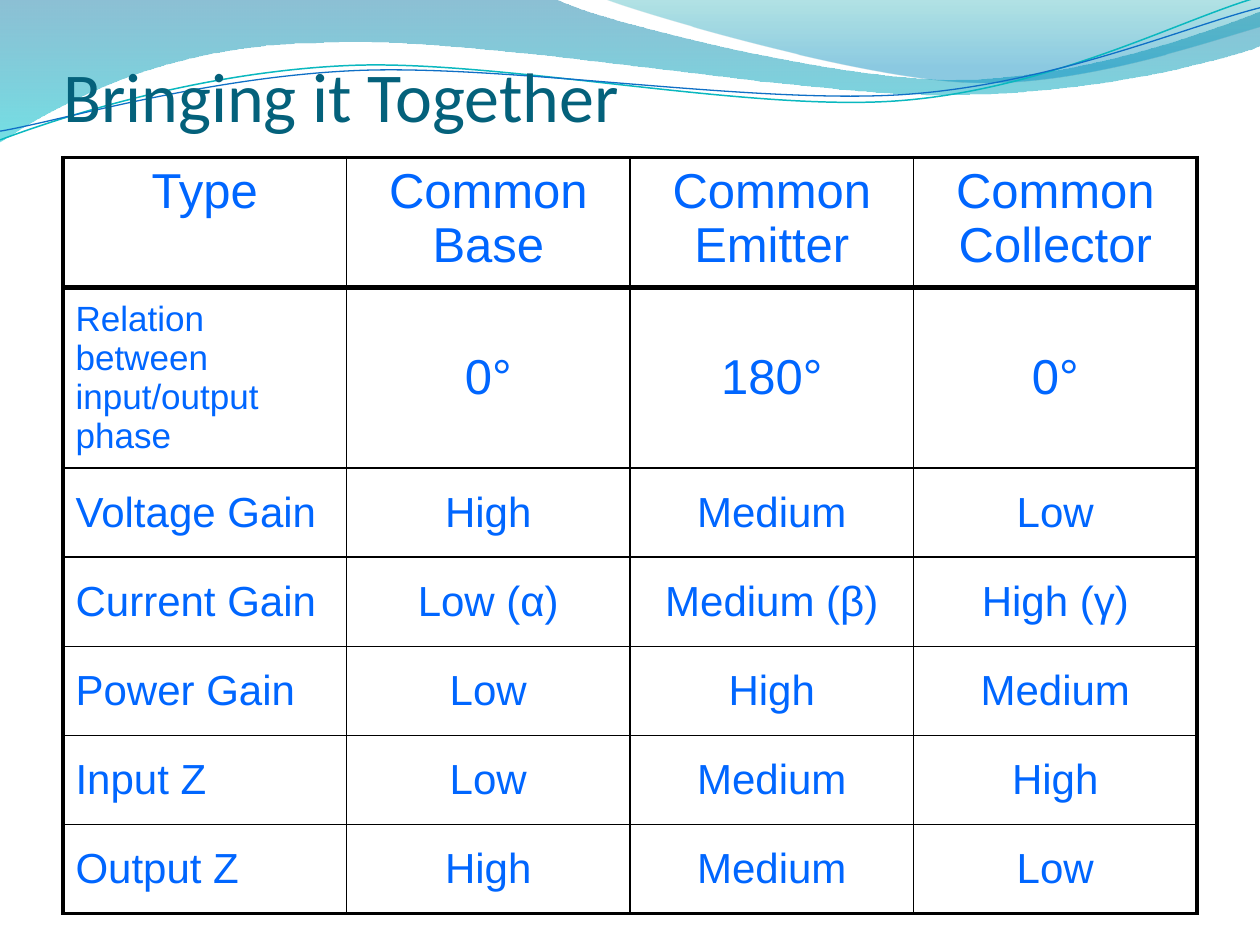
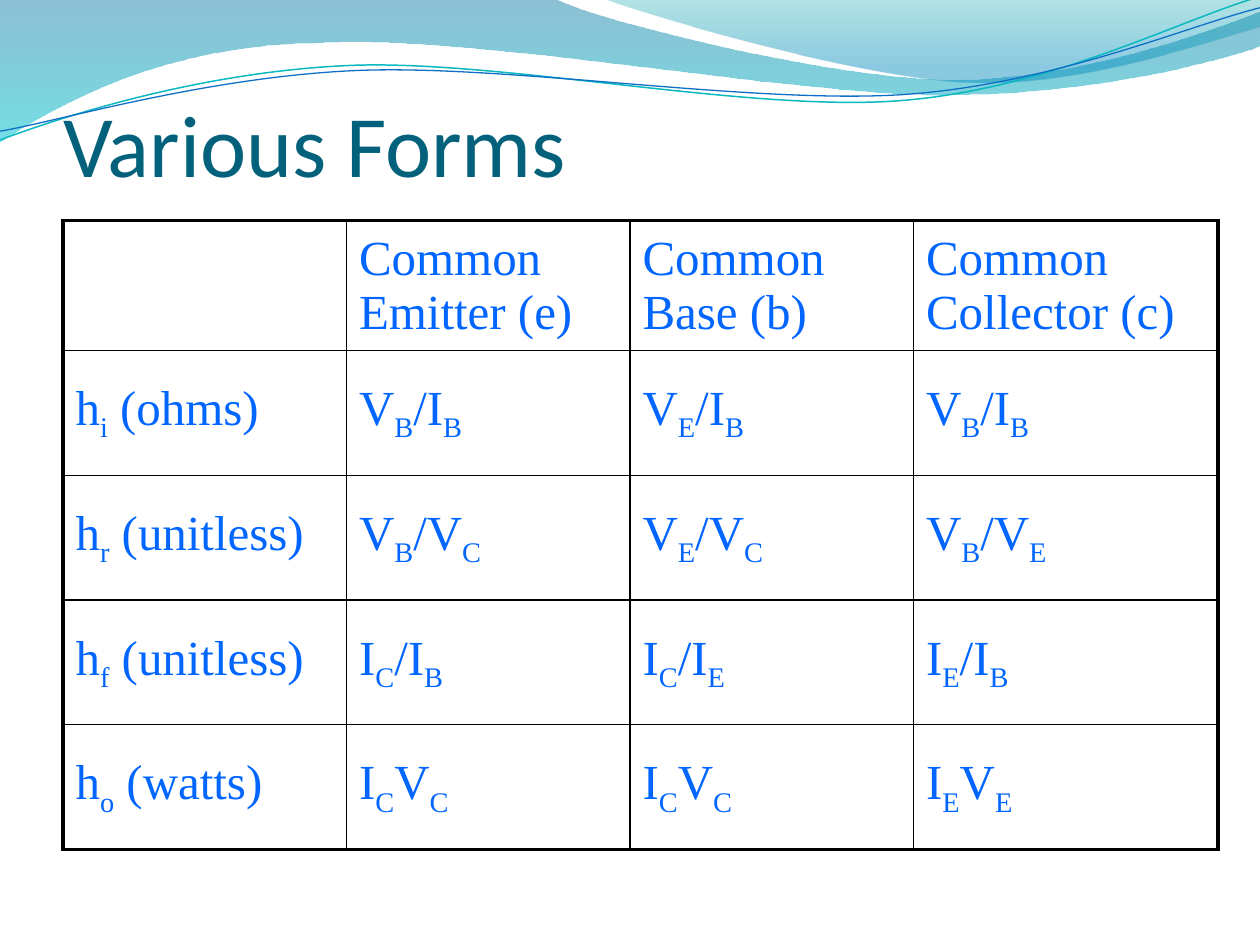
from dataclasses import dataclass

from lxml import etree
from pptx import Presentation
from pptx import util as u
from pptx.dml.color import RGBColor
from pptx.enum import text
from pptx.oxml.ns import qn


@dataclass(frozen=True)
class Theme:
    title_color: str = "04617B"
    table_color: str = "0066FF"
    border_color: str = "000000"
    title_font: str = "Calibri"
    sans: str = "Arial"
    serif: str = "Times New Roman"
    large: int = 28
    medium: int = 24
    small: int = 20
    hairline: float = 1
    frame: float = 2.25
    header_rule: float = 3


THEME = Theme()
COLUMNS, ROWS = 40, 30
CELL = u.Inches(0.25)
TITLE_ONLY = 5
LINE_TILT = 357.3

# Each wave: start point, then cubic segments (two controls and an end) or single points.
# Bands add gradient stops of (position, colour, opacity); lines add a colour and a width.
BANDS = [
    ((0, -0.04), [
        [(17.6, -0.04)],
        [(19.04, 0.68), (26.56, 2.52), (30.32, 2.52)],
        [(34.12, 2.52), (38.32, 1.04), (40, 0.36)],
        [(40.04, 1.44)],
        [(39.32, 1.76), (34.8, 3.04), (29.84, 3)],
        [(24.88, 3), (15.28, 1.12), (10.28, 1.36)],
        [(5.16, 1.4), (1.84, 3.32), (-0.04, 4.52)],
    ], [(0, "0074A1", 45), (1, "00C6CF", 55)]),
    ((19.16, -0.04), [
        [(20.36, 0.44), (27.28, 2.48), (30.76, 2.6)],
        [(34.24, 2.76), (38.44, 1.28), (40, 0.84)],
        [(40, 0)],
    ], [(0, "00A1A9", 30), (0.8, "008BBF", 45)]),
]
LINES = [
    ((-0.08, 3.5), [
        [(1.87, 2.87), (6.34, 1.64), (11.1, 1.66)],
        [(15.82, 1.68), (23.66, 3.74), (28.47, 3.6)],
        [(33.28, 3.47), (37.58, 1.43), (40.01, 0.86)],
    ], "0AB8BF", 0.85),
    ((-0.06, 3.22), [
        [(1.83, 2.99), (6.57, 1.81), (11.34, 1.83)],
        [(16.14, 1.86), (23.83, 3.5), (28.64, 3.41)],
        [(33.41, 3.31), (37.69, 1.67), (40.08, 1.19)],
    ], "0F6FC6", 0.75),
]

COMPARISON = [
    ["Type", "Common Base", "Common Emitter", "Common Collector"],
    ["Relation between input/output phase", "0°", "180°", "0°"],
    ["Voltage Gain", "High", "Medium", "Low"],
    ["Current Gain", "Low (α)", "Medium (β)", "High (γ)"],
    ["Power Gain", "Low", "High", "Medium"],
    ["Input Z", "Low", "Medium", "High"],
    ["Output Z", "High", "Medium", "Low"],
]
# An underscore lowers the character after it.
PARAMETERS = [
    ["", "Common Emitter (e)", "Common Base (b)", "Common Collector (c)"],
    ["h_i (ohms)", "V_B/I_B", "V_E/I_B", "V_B/I_B"],
    ["h_r (unitless)", "V_B/V_C", "V_E/V_C", "V_B/V_E"],
    ["h_f (unitless)", "I_C/I_B", "I_C/I_E", "I_E/I_B"],
    ["h_o (watts)", "I_CV_C", "I_CV_C", "I_EV_E"],
]


def grid(*lengths):
    return [round(length * CELL) for length in lengths]


def rgb(color):
    return RGBColor.from_string(color)


def add_wave(slide, start, segments, closed):
    """Join the segment ends with straight edges, then bend those that have controls."""
    builder = slide.shapes.build_freeform(*grid(*start))
    builder.add_line_segments([grid(*segment[-1]) for segment in segments], close=closed)
    wave = builder.convert_to_shape()
    wave.shadow.inherit = False
    edges = list(wave._element.spPr.iter(qn("a:lnTo")))
    for edge, segment in zip(edges, segments):
        if len(segment) == 3:
            curve = etree.Element(qn("a:cubicBezTo"))
            for x, y in (grid(*point) for point in segment):
                etree.SubElement(curve, qn("a:pt"), x=str(x - wave.left), y=str(y - wave.top))
            edge.getparent().replace(edge, curve)
    return wave


def add_band(slide, start, segments, stops):
    band = add_wave(slide, start, segments, closed=True)
    band.line.fill.background()
    band.fill.gradient()
    band.fill.gradient_angle = 270
    for stop, (position, color, _) in zip(band.fill.gradient_stops, stops):
        stop.position = position
        stop.color.rgb = rgb(color)
    colors = band._element.spPr.iter(qn("a:srgbClr"))
    for element, (_, _, opacity) in zip(list(colors), stops):
        etree.SubElement(element, qn("a:alpha"), val=str(opacity * 1000))
    return band


def add_wave_line(slide, start, segments, color, width):
    line = add_wave(slide, start, segments, closed=False)
    line.rotation = LINE_TILT
    line.fill.background()
    line.line.color.rgb = rgb(color)
    line.line.width = u.Pt(width)
    return line


def decorate_layout(layout, slide):
    """Draw the waves on the slide, then move them behind everything in its layout."""
    waves = [add_band(slide, *band) for band in BANDS]
    waves += [add_wave_line(slide, *line) for line in LINES]
    for position, wave in enumerate(waves, start=2):
        layout.shapes._spTree.insert(position, wave._element)


def set_title(slide, box, words, size):
    title = slide.shapes.title
    title.left, title.top, title.width, title.height = grid(*box)
    frame = title.text_frame
    frame.text = words
    frame.auto_size = text.MSO_AUTO_SIZE.NONE
    frame.vertical_anchor = text.MSO_ANCHOR.BOTTOM
    frame.margin_left = frame.margin_right = frame.margin_bottom = 0
    paragraph = frame.paragraphs[0]
    paragraph.alignment = text.PP_ALIGN.LEFT
    set_font(paragraph, THEME.title_font, size, THEME.title_color)


def set_font(paragraph, name, size, color):
    font = paragraph.font
    font.name, font.size = name, u.Pt(size)
    font.color.rgb = rgb(color)


def write_formula(paragraph, formula):
    plain, *lowered = formula.split("_")
    pieces = [(plain, False)]
    for part in lowered:
        pieces += [(part[0], True), (part[1:], False)]
    for words, is_subscript in pieces:
        if words:
            run = paragraph.add_run()
            run.text = words
            if is_subscript:
                run._r.get_or_add_rPr().set("baseline", "-25000")


def set_borders(cell, widths):
    """Widths are in points, for the left, right, top and bottom edges."""
    properties = cell._tc.get_or_add_tcPr()
    for position, (side, width) in enumerate(zip("LRTB", widths)):
        edge = etree.Element(qn(f"a:ln{side}"), w=str(u.Pt(width)))
        fill = etree.SubElement(edge, qn("a:solidFill"))
        etree.SubElement(fill, qn("a:srgbClr"), val=THEME.border_color)
        properties.insert(position, edge)


def add_grid_table(slide, origin, widths, heights, content, font, style, header_rule):
    """Style gives the size, alignment and anchor for a row and column."""
    box = grid(*origin, sum(widths), sum(heights))
    table = slide.shapes.add_table(len(heights), len(widths), *box).table
    table.first_row = table.horz_banding = False
    for column, width in zip(table.columns, grid(*widths)):
        column.width = width
    for row, height in zip(table.rows, grid(*heights)):
        row.height = height
    last_row, last_column = len(heights) - 1, len(widths) - 1
    for r, line in enumerate(content):
        for c, words in enumerate(line):
            cell = table.cell(r, c)
            size, alignment, cell.vertical_anchor = style(r, c)
            cell.fill.background()
            paragraph = cell.text_frame.paragraphs[0]
            paragraph.alignment = alignment
            write_formula(paragraph, words)
            set_font(paragraph, font, size, THEME.table_color)
            set_borders(cell, (
                THEME.frame if c == 0 else THEME.hairline,
                THEME.frame if c == last_column else THEME.hairline,
                {0: THEME.frame, 1: header_rule}.get(r, THEME.hairline),
                {0: header_rule, last_row: THEME.frame}.get(r, THEME.hairline)))


def comparison_style(row, column):
    if row > 1:
        size = THEME.medium
    else:
        size = THEME.small if (row, column) == (1, 0) else THEME.large
    is_label = row > 0 and column == 0
    return (size,
            text.PP_ALIGN.LEFT if is_label else text.PP_ALIGN.CENTER,
            text.MSO_ANCHOR.MIDDLE if row else text.MSO_ANCHOR.TOP)


def parameter_style(row, column):
    return THEME.large, text.PP_ALIGN.LEFT, text.MSO_ANCHOR.MIDDLE


def fill_comparison_slide(slide):
    set_title(slide, (2, 1.2, 36, 3.12), "Bringing it Together", 40)
    add_grid_table(slide, (2, 5), [9] * 4, [4.13, 5.73] + [2.83] * 5, COMPARISON,
                   THEME.sans, comparison_style, THEME.header_rule)


def fill_parameter_slide(slide):
    set_title(slide, (2, 1.2, 36, 5), "Various Forms", 50)
    add_grid_table(slide, (2, 7), [9] * 3 + [9.67], [4.13] + [3.96] * 4, PARAMETERS,
                   THEME.serif, parameter_style, THEME.hairline)


def main():
    presentation = Presentation()
    presentation.slide_width, presentation.slide_height = grid(COLUMNS, ROWS)
    layout = presentation.slide_layouts[TITLE_ONLY]
    comparison, parameters = [presentation.slides.add_slide(layout) for _ in range(2)]
    decorate_layout(layout, comparison)
    fill_comparison_slide(comparison)
    fill_parameter_slide(parameters)
    presentation.save("out.pptx")


if __name__ == "__main__":
    main()
